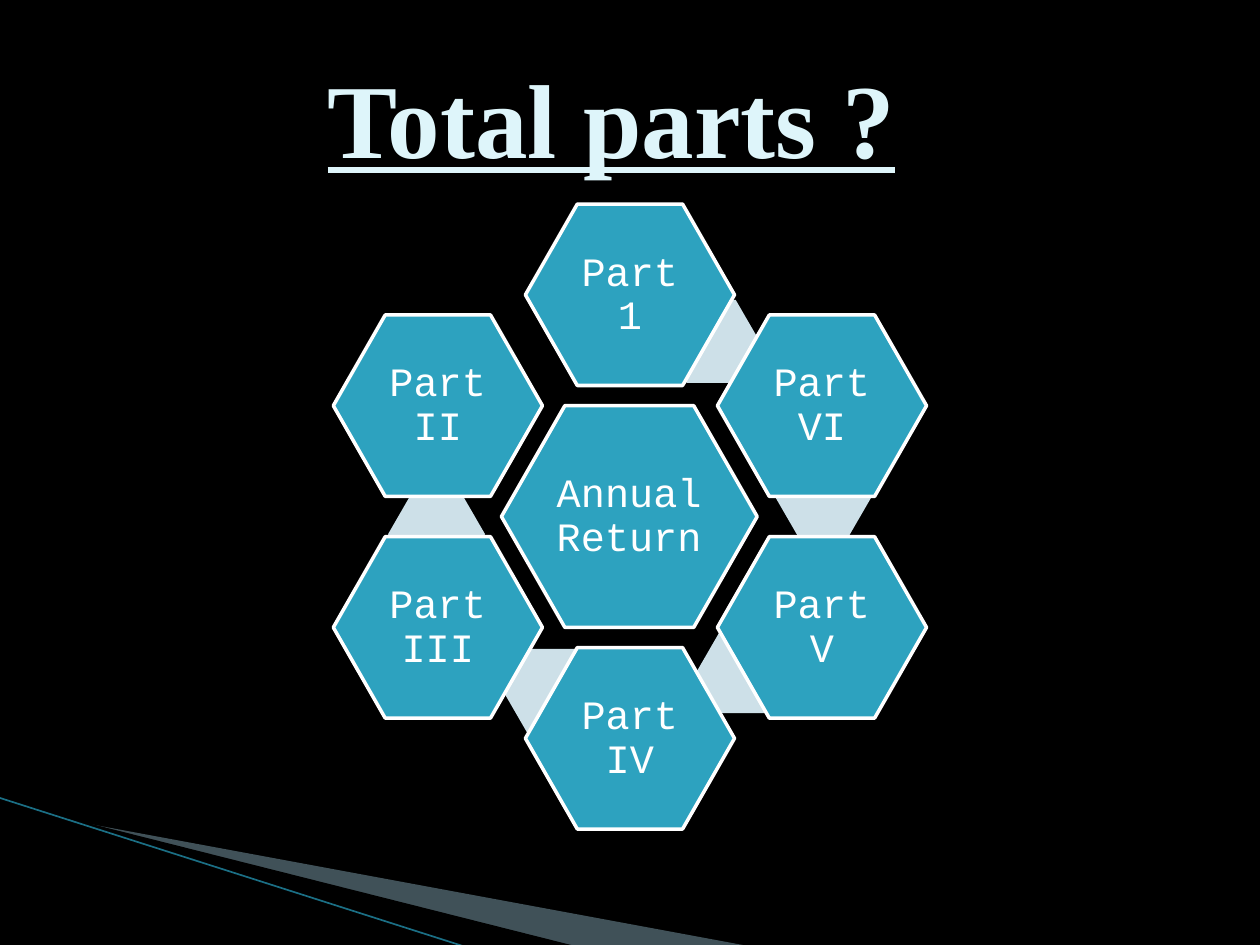
"""Build the slide showing the parts of an annual return around a hexagon."""
from math import cos, radians, sin

from lxml.etree import SubElement
from pptx import Presentation
from pptx.dml.color import RGBColor
from pptx.enum.shapes import MSO_CONNECTOR, MSO_SHAPE
from pptx.enum.text import MSO_ANCHOR, PP_ALIGN
from pptx.oxml.ns import qn
from pptx.util import Inches, Pt

BLACK = RGBColor(0x00, 0x00, 0x00)
WHITE = RGBColor(0xFF, 0xFF, 0xFF)
TEAL = RGBColor(0x2D, 0xA2, 0xBF)
PALE = RGBColor(0xCD, 0xE0, 0xE8)
MIST = RGBColor(0xA0, 0xCB, 0xDC)
DEEP = RGBColor(0x1B, 0x6F, 0x85)
ICE = RGBColor(0xDE, 0xF5, 0xFA)


def write(shape, text, size, font, color, align=PP_ALIGN.CENTER, bold=False,
          line=False, inset=0.03, left=0.03, space=1.0):
    frame = shape.text_frame
    frame.word_wrap = True
    frame.vertical_anchor = MSO_ANCHOR.MIDDLE
    frame.margin_left = Inches(left)
    frame.margin_right = frame.margin_top = frame.margin_bottom = Inches(inset)
    para = frame.paragraphs[0]
    para.alignment = align
    para.line_spacing = space
    run = para.add_run()
    run.text = text
    run.font.size = Pt(size)
    run.font.name = font
    run.font.bold = bold
    run.font.underline = line
    run.font.color.rgb = color


def add_hex(x, y, wide, high, fill, text=None):
    box = shapes.add_shape(MSO_SHAPE.HEXAGON, Inches(x), Inches(y),
                           Inches(wide), Inches(high))
    box.adjustments[0] = 0.286 if text else 0.289
    box.shadow.inherit = False
    box.fill.solid()
    box.fill.fore_color.rgb = fill
    if text:
        box.line.color.rgb = WHITE
        box.line.width = Pt(2)
        write(box, text, 23, "Courier New", WHITE, space=0.9)
    else:
        box.line.fill.background()


deck = Presentation()
deck.slide_width, deck.slide_height = Inches(10), Inches(7.5)
slide = deck.slides.add_slide(deck.slide_layouts[6])
slide.background.fill.solid()
slide.background.fill.fore_color.rgb = BLACK
shapes = slide.shapes

wedges = [
    (MIST, 40, [(0.55, 6.51), (5.95, 7.51), (4.56, 7.51), (0.55, 6.5)]),
    (BLACK, 100, [(0.53, 6.49), (4.57, 7.51), (3.72, 7.52), (0.54, 6.5)]),
]
for color, alpha, points in wedges:
    spots = [(Inches(x), Inches(y)) for x, y in points]
    pen = shapes.build_freeform(*spots[0])
    pen.add_line_segments(spots[1:], close=True)
    wedge = pen.convert_to_shape()
    wedge.shadow.inherit = False
    wedge.fill.solid()
    wedge.fill.fore_color.rgb = color
    wedge.line.fill.background()
    if alpha < 100:
        tone = wedge.fill._xPr.find(".//" + qn("a:srgbClr"))
        SubElement(tone, qn("a:alpha")).set("val", str(alpha * 1000))

edge = shapes.add_connector(MSO_CONNECTOR.STRAIGHT, Inches(-0.01), Inches(6.33),
                            Inches(3.71), Inches(7.52))
edge.line.color.rgb = DEEP
edge.line.width = Pt(0.95)
SubElement(edge._element.spPr, qn("a:effectLst"))

mid_x, mid_y, reach = 5, 4.1, 1.76
wide, high = 1.66, 1.44
add_hex(mid_x - 1.02, mid_y - 0.88, 2.03, 1.76, TEAL, "Annual Return")
parts = [
    ("Part 1", (5.26, 2.38)),
    ("Part VI", (6.15, 3.61)),
    ("Part V", (5.53, 5)),
    ("Part IV", (3.99, 5.15)),
    ("Part III", (3.08, 3.91)),
    ("Part II", None),
]
for step, (name, link) in enumerate(parts):
    if link:
        add_hex(*link, 0.77, 0.66, PALE)
    turn = radians(60 * step)
    add_hex(mid_x + reach * sin(turn) - wide / 2,
            mid_y - reach * cos(turn) - high / 2, wide, high, TEAL, name)

title = shapes.add_textbox(Inches(0.5), Inches(0.3), Inches(9), Inches(1.25))
write(title, "Total parts ?", 60, "Times New Roman", ICE, align=PP_ALIGN.LEFT,
      bold=True, line=True, inset=0.05, left=2.1)

deck.save("out.pptx")
